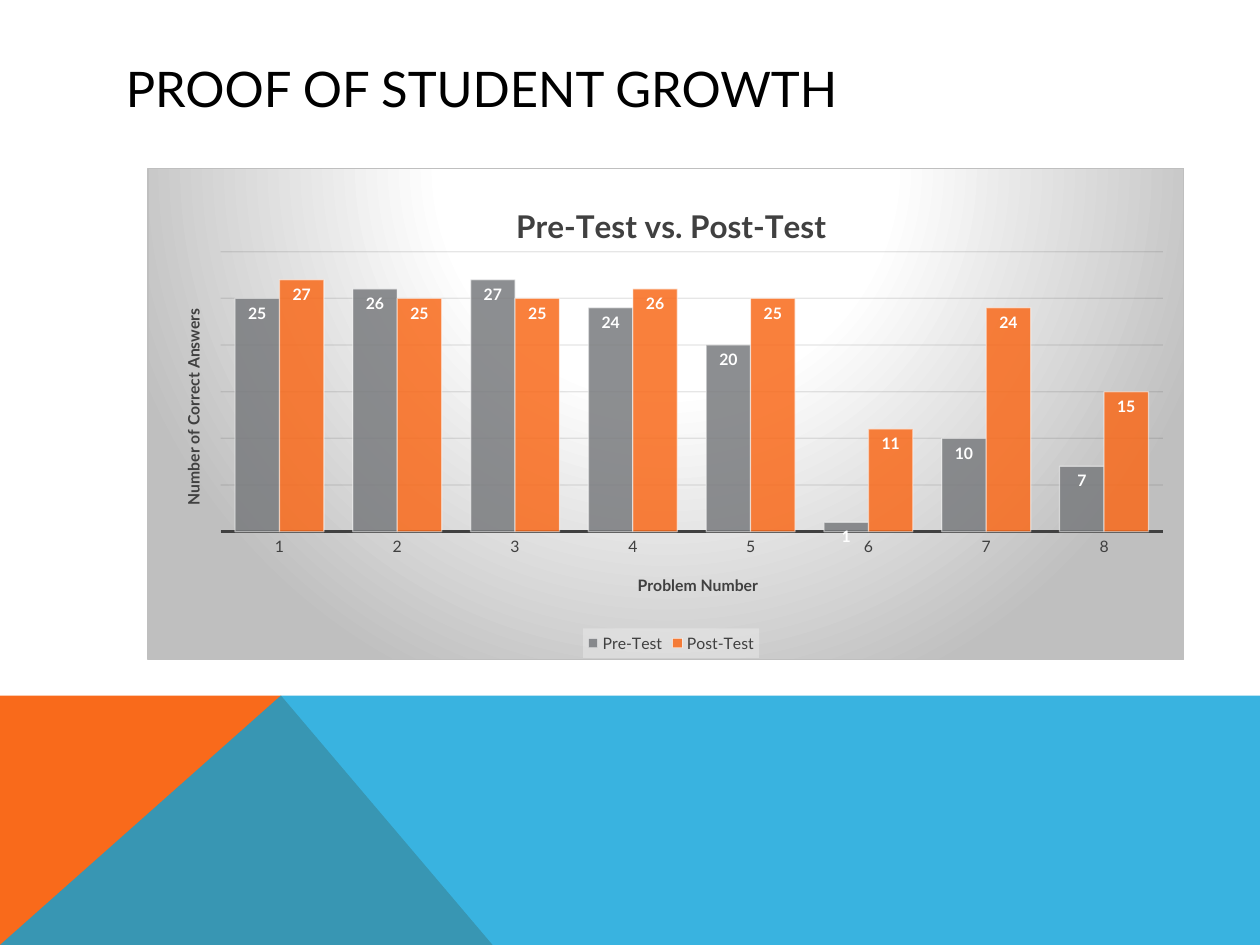
import dataclasses

import lxml.etree
import pptx
import pptx.chart.data
import pptx.dml.color
import pptx.enum.chart
import pptx.enum.text
import pptx.oxml
import pptx.oxml.ns
import pptx.util

qn = pptx.oxml.ns.qn


@dataclasses.dataclass(frozen=True)
class Theme:
    font: str = "Lato"
    black: str = "000000"
    white: str = "FFFFFF"
    ink: str = "404040"
    grid: str = "0D0D0D"
    silver: str = "BFBFBF"
    mist: str = "F2F2F2"
    gray: str = "797B7E"
    orange: str = "F96A1B"
    blue: str = "08A1D9"
    heading: int = 28
    chart_title: int = 18
    body: int = 10
    small: int = 9
    hairline: float = 0.75
    axis_line: float = 1.5


class Deck:
    columns = 100
    rows = 75

    def __init__(self, theme):
        self.theme = theme
        self.file = pptx.Presentation()
        self.file.slide_width = pptx.util.Inches(10)
        self.file.slide_height = pptx.util.Inches(7.5)
        self.slide = self.file.slides.add_slide(self.file.slide_layouts[6])

    def point(self, column, row):
        return (int(self.file.slide_width * column / self.columns),
                int(self.file.slide_height * row / self.rows))

    def box(self, column, row, width, height):
        return *self.point(column, row), *self.point(width, height)

    def paint(self, fill, color, opacity=100):
        fill.solid()
        fill.fore_color.rgb = pptx.dml.color.RGBColor.from_string(color)
        if opacity < 100:
            tint = fill._xPr.find(".//" + qn("a:srgbClr"))
            lxml.etree.SubElement(tint, qn("a:alpha"), val=str(opacity * 1000))

    def stroke(self, line, color, width, opacity=100):
        line.width = pptx.util.Pt(width)
        self.paint(line.fill, color, opacity)

    def style(self, font, size, color, bold=False):
        font.name = self.theme.font
        font.size = pptx.util.Pt(size)
        font.bold = bold
        font.color.rgb = pptx.dml.color.RGBColor.from_string(color)

    def add_text(self, frame, text, size, color, bold=False):
        run = frame.paragraphs[0].add_run()
        run.text = text
        self.style(run.font, size, color, bold)

    def polygon(self, corners, color, opacity=100):
        start, *others = [self.point(*corner) for corner in corners]
        builder = self.slide.shapes.build_freeform(*start, scale=1.0)
        builder.add_line_segments(others, close=True)
        band = builder.convert_to_shape()
        band.shadow.inherit = False
        band.line.fill.background()
        self.paint(band.fill, color, opacity)

    def heading(self, text, *place):
        frame = self.slide.shapes.add_textbox(*self.box(*place)).text_frame
        frame.word_wrap = True
        frame.vertical_anchor = pptx.enum.text.MSO_ANCHOR.MIDDLE
        self.add_text(frame, text, self.theme.heading, self.theme.black)

    def arrange(self, element, **shares):
        for old in element.findall(qn("c:layout")):
            element.remove(old)
        layout = pptx.oxml.parse_xml(
            f'<c:layout {pptx.oxml.ns.nsdecls("c")}><c:manualLayout/></c:layout>')
        inner = {"layoutTarget": "inner"} if element.tag == qn("c:plotArea") else {}
        modes = {"xMode": "edge", "yMode": "edge"}
        for name, value in {**inner, **modes, **shares}.items():
            lxml.etree.SubElement(layout[0], qn(f"c:{name}"), val=str(value))
        overlay = element.find(qn("c:overlay"))
        element.insert(0 if overlay is None else element.index(overlay), layout)

    def caption(self, owner, holder, text, size, x, y):
        self.add_text(holder.text_frame, text, size, self.theme.ink, True)
        self.arrange(owner.find(qn("c:title")), x=x, y=y)

    def backdrop(self, chart):
        theme = self.theme
        stops = "".join(
            f'<a:gs pos="{share * 1000}"><a:srgbClr val="{color}"/></a:gs>'
            for share, color in ((0, theme.white), (39, theme.white), (100, theme.silver)))
        chart._chartSpace.find(qn("c:chart")).addnext(pptx.oxml.parse_xml(
            f'<c:spPr {pptx.oxml.ns.nsdecls("c", "a")}><a:gradFill><a:gsLst>{stops}</a:gsLst>'
            '<a:path path="circle"><a:fillToRect l="50000" t="-80000" r="50000" b="180000"/>'
            f'</a:path></a:gradFill><a:ln w="{pptx.util.Pt(theme.hairline)}"><a:solidFill>'
            f'<a:srgbClr val="{theme.silver}"/></a:solidFill></a:ln></c:spPr>'))

    def legend(self, chart):
        chart.has_legend = True
        chart.legend.position = pptx.enum.chart.XL_LEGEND_POSITION.BOTTOM
        chart.legend.include_in_layout = False
        self.style(chart.legend.font, self.theme.small, self.theme.ink)
        element = chart.legend._element
        self.arrange(element, x=0.42, y=0.94, w=0.17, h=0.06)
        element.find(qn("c:overlay")).addnext(pptx.oxml.parse_xml(
            f'<c:spPr {pptx.oxml.ns.nsdecls("c", "a")}><a:solidFill>'
            f'<a:srgbClr val="{self.theme.mist}"><a:alpha val="39000"/></a:srgbClr>'
            '</a:solidFill></c:spPr>'))

    def columns_chart(self, title, category_title, value_title, results, colors, *place):
        theme = self.theme
        data = pptx.chart.data.CategoryChartData()
        data.categories = [str(number + 1) for number in range(len(next(iter(results.values()))))]
        for name, scores in results.items():
            data.add_series(name, scores)
        chart = self.slide.shapes.add_chart(
            pptx.enum.chart.XL_CHART_TYPE.COLUMN_CLUSTERED, *self.box(*place), data).chart
        self.style(chart.font, theme.body, theme.black)
        self.backdrop(chart)
        chart.has_title = True
        self.caption(chart._chartSpace.chart, chart.chart_title, title,
                     theme.chart_title, 0.35, 0.06)

        problems = chart.category_axis
        problems.major_tick_mark = pptx.enum.chart.XL_TICK_MARK.NONE
        self.style(problems.tick_labels.font, theme.small, theme.ink)
        self.stroke(problems.format.line, theme.ink, theme.axis_line)
        self.caption(problems._element, problems.axis_title, category_title,
                     theme.small, 0.47, 0.82)

        answers = chart.value_axis
        answers.visible = False
        answers.minimum_scale, answers.maximum_scale, answers.major_unit = 0, 30, 5
        self.stroke(answers.major_gridlines.format.line, theme.grid, theme.hairline, 10)
        self.caption(answers._element, answers.axis_title, value_title,
                     theme.small, 0.03, 0.28)
        turn = answers.axis_title.text_frame._txBody.find(qn("a:bodyPr"))
        turn.set("rot", "-5400000")
        turn.set("vert", "horz")

        plot = chart.plots[0]
        plot.gap_width = 65
        plot.overlap = 0
        plot.vary_by_categories = False
        for series, color in zip(plot.series, colors):
            self.paint(series.format.fill, color, 85)
            self.stroke(series.format.line, theme.white, theme.hairline, 50)
            labels = series.data_labels
            labels.show_value = True
            labels.position = pptx.enum.chart.XL_LABEL_POSITION.INSIDE_END
            self.style(labels.font, theme.small, theme.white, True)
        self.arrange(chart._chartSpace.chart.plotArea, x=0.07, y=0.17, w=0.91, h=0.57)
        self.legend(chart)


def main():
    theme = Theme()
    deck = Deck(theme)
    horizon, peak, foot = 55.2, 22.3, 39.1
    deck.polygon([(0, 75), (0, horizon), (peak, horizon), (foot, 75)], theme.orange)
    deck.polygon([(0, 75), (peak, horizon), (100, horizon), (100, 75)], theme.blue, 80)
    deck.heading("PROOF OF STUDENT GROWTH", 9, 4, 82.2, 6)
    deck.columns_chart(
        "Pre-Test vs. Post-Test ", "Problem Number", "Number of Correct Answers",
        {"Pre-Test": (25, 26, 27, 24, 20, 1, 10, 7),
         "Post-Test": (27, 25, 25, 26, 25, 11, 24, 15)},
        (theme.gray, theme.orange), 11.7, 13.3, 82.3, 39.1)
    deck.file.save("out.pptx")


if __name__ == "__main__":
    main()
